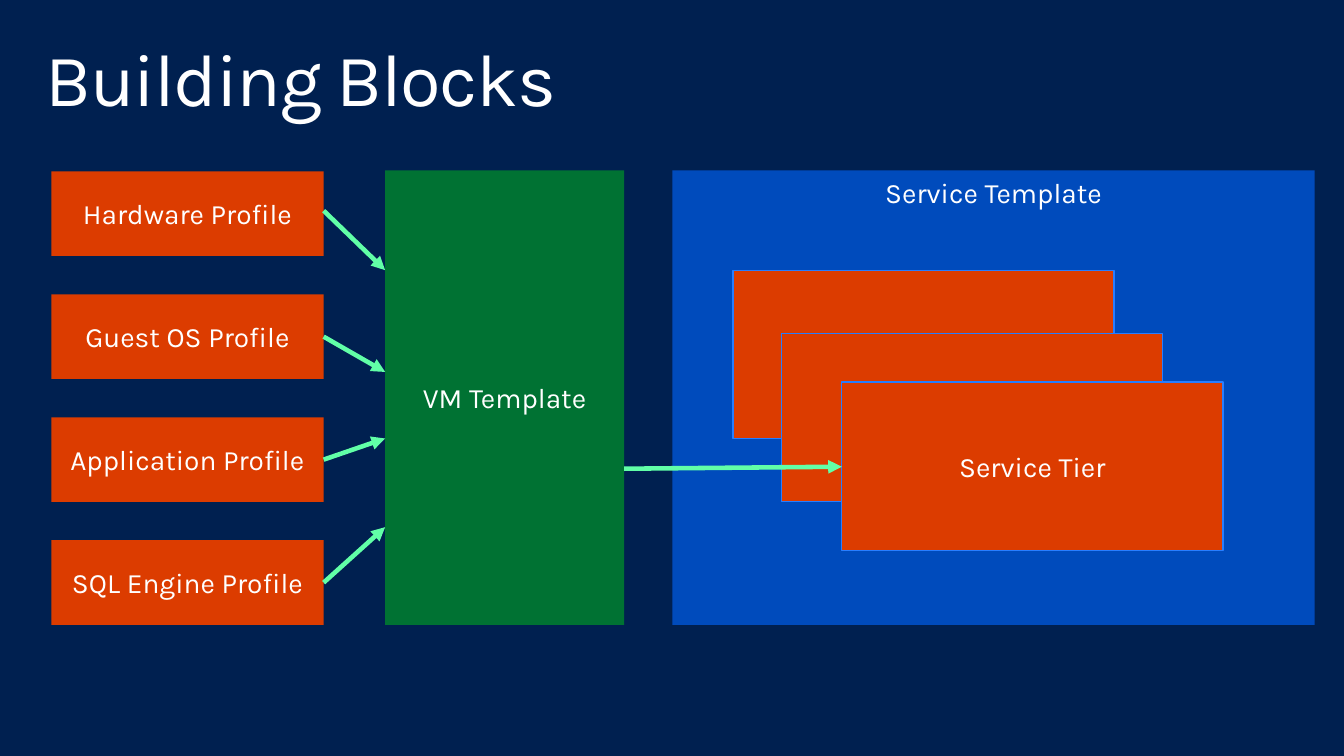
import pptx
import pptx.util
import pptx.dml.color
import pptx.enum.shapes
import pptx.enum.text
import pptx.oxml.ns
from lxml import etree

EMU_PER_PX = 9144  # 100 px to the inch
ALIGN = pptx.enum.text.PP_ALIGN
ANCHOR = pptx.enum.text.MSO_ANCHOR

NAVY, WHITE, MINT = "002050", "FFFFFF", "61FFA7"
GREEN, BLUE, ORANGE, EDGE = "007233", "004BBC", "DC3C00", "287EFF"


def px(n):
    return pptx.util.Emu(n * EMU_PER_PX)


def rgb(color):
    return pptx.dml.color.RGBColor.from_string(color)


class Deck:
    font = "Karla"

    def __init__(self, width, height):
        self.prs = pptx.Presentation()
        self.prs.slide_width, self.prs.slide_height = px(width), px(height)

    def slide(self, background):
        self.s = self.prs.slides.add_slide(self.prs.slide_layouts[5])
        fill = self.s.background.fill
        fill.solid()
        fill.fore_color.rgb = rgb(background)

    def set_text(self, sp, text, size, align, anchor, inset_x, inset_y):
        tf = sp.text_frame
        tf.word_wrap = True
        tf.auto_size = pptx.enum.text.MSO_AUTO_SIZE.NONE
        tf.vertical_anchor = anchor
        tf.margin_left = tf.margin_right = px(inset_x)
        tf.margin_top = tf.margin_bottom = px(inset_y)
        p = tf.paragraphs[0]
        p.text = text
        p.alignment = align
        p.font.name = self.font
        p.font.size = pptx.util.Pt(size)
        p.font.color.rgb = rgb(WHITE)
        return p

    def title(self, text, x, y, w, h):
        sp = self.s.shapes.title
        sp.left, sp.top, sp.width, sp.height = map(px, (x, y, w, h))
        p = self.set_text(sp, text, 52.9, ALIGN.LEFT, ANCHOR.TOP, 16, 10)
        p.line_spacing = 0.9
        p.runs[0].font._element.set("spc", "-100")

    def box(self, x, y, w, h, color, text="", edge=None, anchor=ANCHOR.MIDDLE):
        sp = self.s.shapes.add_shape(
            pptx.enum.shapes.MSO_SHAPE.RECTANGLE, px(x), px(y), px(w), px(h))
        sp.shadow.inherit = False
        sp.fill.solid()
        sp.fill.fore_color.rgb = rgb(color)
        if edge:
            sp.line.color.rgb = rgb(edge)
            sp.line.width = pptx.util.Pt(0.85)
        else:
            sp.line.fill.background()
        if text:
            self.set_text(sp, text, 20, ALIGN.CENTER, anchor, 0, 5)

    def arrow(self, x1, y1, x2, y2):
        c = self.s.shapes.add_connector(
            pptx.enum.shapes.MSO_CONNECTOR.STRAIGHT, px(x1), px(y1), px(x2), px(y2))
        c.line.color.rgb = rgb(MINT)
        c.line.width = pptx.util.Pt(3.25)
        qn = pptx.oxml.ns.qn
        ln = c._element.spPr.find(qn("a:ln"))
        etree.SubElement(ln, qn("a:tailEnd"), type="triangle")
        etree.SubElement(c._element.spPr, qn("a:effectLst"))


def main():
    deck = Deck(1333, 750)
    deck.slide(NAVY)
    deck.title("Building Blocks", 29, 32, 1275, 98)

    # Templates
    top, height = 169, 451
    vm_left, vm_width = 382, 237
    deck.box(vm_left, top, vm_width, height, GREEN, "VM Template")
    deck.box(667, top, 637, height, BLUE, "Service Template", anchor=ANCHOR.TOP)

    # Profiles, each with an arrow into the VM template
    left, width, pitch = 51, 270, 122
    profiles = [
        ("Hardware Profile", 209, 268),
        ("Guest OS Profile", 334, 369),
        ("Application Profile", 456, 435),
        ("SQL Engine Profile", 578, 523),
    ]
    for i, (name, start, end) in enumerate(profiles):
        deck.box(left, 170 + i * pitch, width, 84, ORANGE, name)
        deck.arrow(left + width, start, vm_left, end)

    # Stacked service tiers
    tier_left = 835
    for x, y, name in [(727, 268, ""), (775, 331, ""), (tier_left, 379, "Service Tier")]:
        deck.box(x, y, 378, 167, ORANGE, name, edge=EDGE)
    deck.arrow(vm_left + vm_width, 465, tier_left, 463)

    deck.prs.save("out.pptx")


if __name__ == "__main__":
    main()
